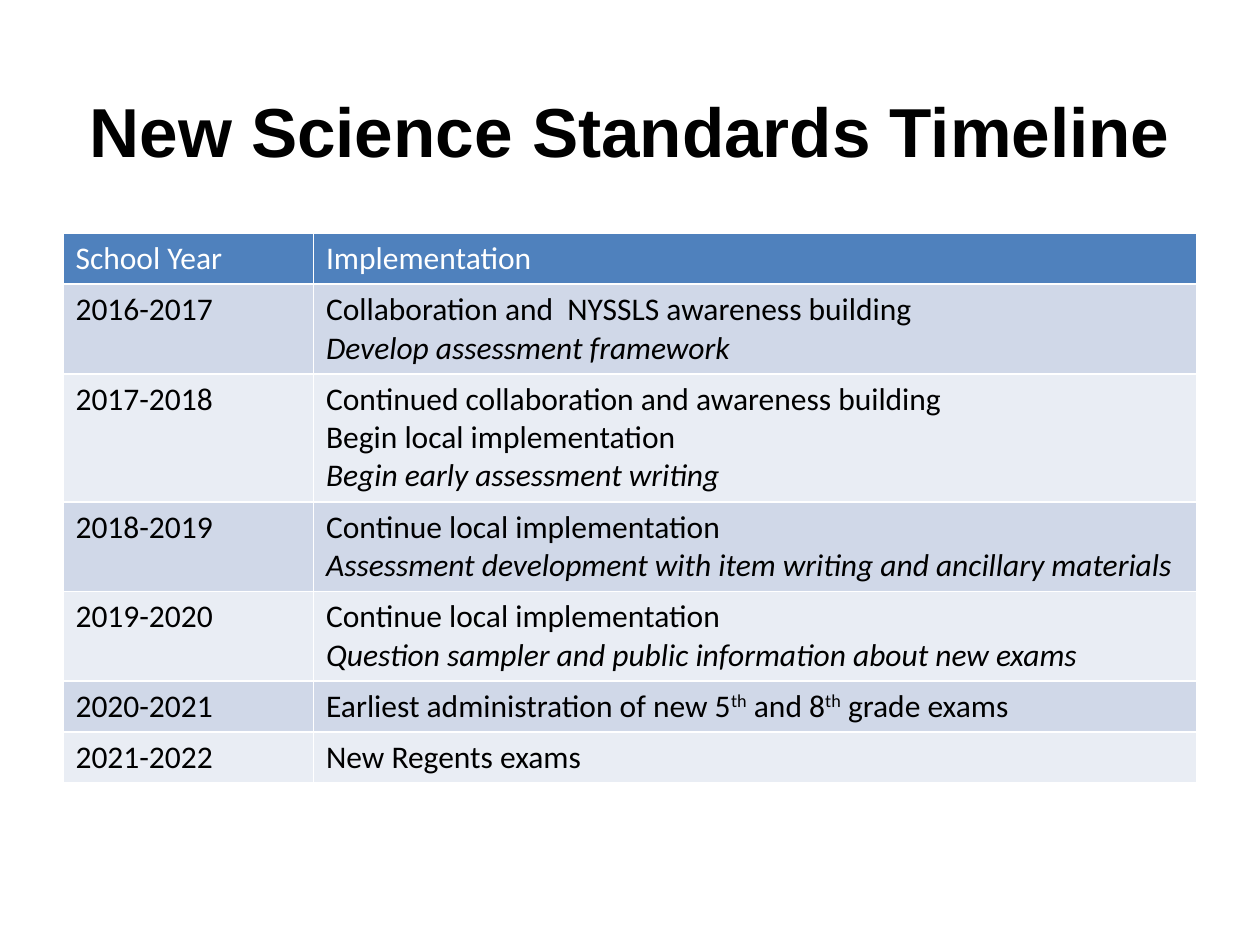
from pptx import Presentation
from pptx.dml.color import RGBColor
from pptx.enum.text import MSO_ANCHOR, PP_ALIGN
from pptx.util import Cm, Pt

# Content: each year has plain steps and assessment steps (set in italics)
TITLE = "New Science Standards Timeline"
HEADER = ("School Year", "Implementation")
TIMELINE = [
    ("2016-2017", ["Collaboration and  NYSSLS awareness building"],
     ["Develop assessment framework"]),
    ("2017-2018", ["Continued collaboration and awareness building",
                   "Begin local implementation"],
     ["Begin early assessment writing"]),
    ("2018-2019", ["Continue local implementation"],
     ["Assessment development with item writing and ancillary materials"]),
    ("2019-2020", ["Continue local implementation"],
     ["Question sampler and public information about new exams"]),
    ("2020-2021", ["Earliest administration of new 5^th^ and 8^th^ grade exams"], []),
    ("2021-2022", ["New Regents exams"], []),
]
SUPERSCRIPT_MARK = "^"

BLACK = RGBColor(0x00, 0x00, 0x00)
WHITE = RGBColor(0xFF, 0xFF, 0xFF)
HEADER_BLUE = RGBColor(0x4F, 0x81, 0xBD)
BANDS = (RGBColor(0xD0, 0xD8, 0xE8), RGBColor(0xE9, 0xED, 0xF4))

# Layout
LEFT, WIDTH = Cm(1.27), Cm(22.86)
TABLE_TOP = Cm(4.7)
YEAR_WIDTH = Cm(5.05)
ROW_PADDING, LINE_HEIGHT = 0.26, 0.77  # cm


def row_height(line_count):
    return Cm(ROW_PADDING + LINE_HEIGHT * line_count)


def fill_cell(cell, lines, fill, color):
    """Write (text, italic) lines; marked parts become superscript."""
    cell.fill.solid()
    cell.fill.fore_color.rgb = fill
    frame = cell.text_frame
    for number, (text, italic) in enumerate(lines):
        paragraph = frame.add_paragraph() if number else frame.paragraphs[0]
        font = paragraph.font
        font.name, font.size = "Calibri", Pt(18)
        font.bold, font.italic = False, italic
        font.color.rgb = color
        for position, part in enumerate(text.split(SUPERSCRIPT_MARK)):
            run = paragraph.add_run()
            run.text = part
            if position % 2:
                run._r.get_or_add_rPr().set("baseline", "30000")


prs = Presentation()
prs.slide_width, prs.slide_height = Cm(25.4), Cm(19.05)
slide = prs.slides.add_slide(prs.slide_layouts[5])

# Title
title = slide.shapes.title
title.left, title.top, title.width, title.height = LEFT, Cm(1.02), WIDTH, Cm(3.18)
title.text_frame.text = TITLE
title.text_frame.vertical_anchor = MSO_ANCHOR.MIDDLE
heading = title.text_frame.paragraphs[0]
heading.alignment = PP_ALIGN.CENTER
heading.font.name, heading.font.size, heading.font.bold = "Arial", Pt(39.6), True
heading.font.color.rgb = BLACK

# Timeline table
heights = [row_height(1)] + [row_height(len(steps) + len(assessments))
                             for _, steps, assessments in TIMELINE]
table = slide.shapes.add_table(len(heights), len(HEADER), LEFT, TABLE_TOP,
                               WIDTH, sum(heights)).table
table.columns[0].width = YEAR_WIDTH
table.columns[1].width = WIDTH - YEAR_WIDTH
for row, height in zip(table.rows, heights):
    row.height = height

for column, label in enumerate(HEADER):
    fill_cell(table.cell(0, column), [(label, False)], HEADER_BLUE, WHITE)

for index, (year, steps, assessments) in enumerate(TIMELINE):
    band = BANDS[index % 2]
    lines = [(step, False) for step in steps] + [(item, True) for item in assessments]
    fill_cell(table.cell(index + 1, 0), [(year, False)], band, BLACK)
    fill_cell(table.cell(index + 1, 1), lines, band, BLACK)

prs.save("out.pptx")
